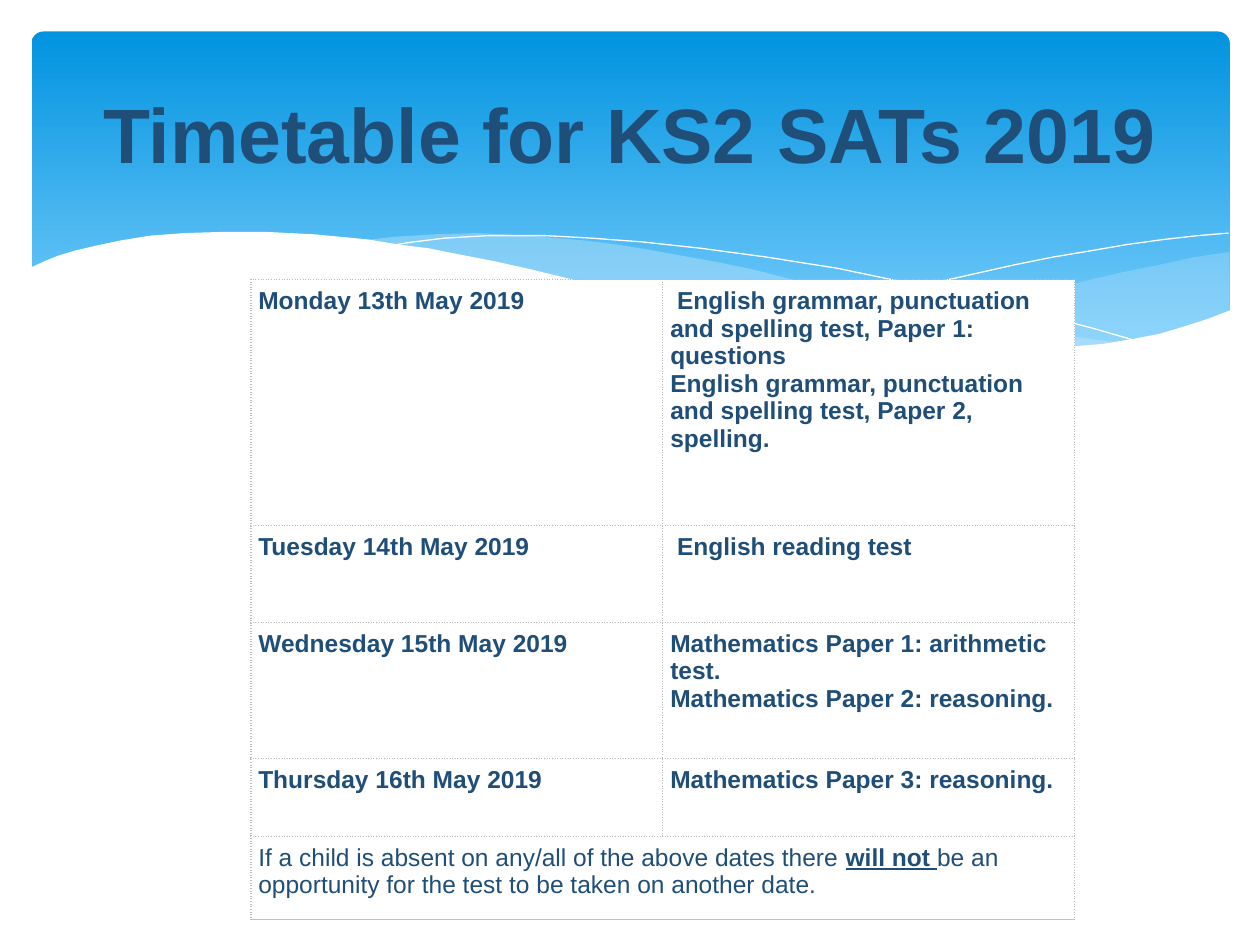
from lxml import etree
from pptx import Presentation
from pptx.dml.color import RGBColor
from pptx.enum.shapes import MSO_SHAPE
from pptx.enum.text import MSO_ANCHOR, PP_ALIGN
from pptx.oxml import parse_xml
from pptx.oxml.ns import nsdecls, qn
from pptx.util import Inches, Pt

ROUNDED = MSO_SHAPE.ROUNDED_RECTANGLE
MIDDLE = MSO_ANCHOR.MIDDLE
CENTER = PP_ALIGN.CENTER
WHITE = RGBColor(0xFF, 0xFF, 0xFF)
NAVY = RGBColor(0x1F, 0x4E, 0x79)
SKY = RGBColor(0x02, 0x93, 0xE0)
LIGHT_SKY = RGBColor(0x83, 0xD3, 0xFE)
PALE_BLUE = RGBColor(0xC6, 0xE7, 0xFC)
GRID_GREY = RGBColor(0xBB, 0xBB, 0xBB)
BASE_GREY = RGBColor(0xBF, 0xC1, 0xC3)


def add_wave(points, closed):
    corners = [(Inches(x), Inches(y)) for x, y in points]
    builder = slide.shapes.build_freeform(*corners[0])
    builder.add_line_segments(corners[1:], close=closed)
    wave = builder.convert_to_shape()
    wave.shadow.inherit = False
    return wave


def style_run(span, size, bold=True):
    span.font.name = "Arial"
    span.font.size = Pt(size)
    span.font.bold = bold
    span.font.color.rgb = NAVY


deck = Presentation()
deck.slide_width = Inches(10)
deck.slide_height = Inches(7.5)
slide = deck.slides.add_slide(deck.slide_layouts[6])

banner = slide.shapes.add_shape(ROUNDED, Inches(0.25), Inches(0.25), Inches(9.51), Inches(2.7))
banner.adjustments[0] = 0.035
banner.shadow.inherit = False
banner.line.fill.background()
banner.fill.gradient()
banner.fill.gradient_angle = 270
for stop, color, position in zip(banner.fill.gradient_stops, (SKY, LIGHT_SKY), (0, 1)):
    stop.color.rgb = color
    stop.position = position

right_wave = [
    (9.76, 2), (9.48, 2.04), (9.21, 2.1), (8.91, 2.16), (8.61, 2.23), (8.05, 2.37),
    (7.53, 2.48), (7.06, 2.57), (6.61, 2.65), (6.91, 2.69), (7.19, 2.72), (7.45, 2.75),
    (7.69, 2.77), (8.03, 2.78), (8.35, 2.77), (8.63, 2.75), (8.89, 2.72), (9.13, 2.67),
    (9.35, 2.62), (9.49, 2.57), (9.63, 2.52), (9.76, 2.47),
]
middle_wave = [
    (8.93, 2.73), (8.66, 2.69), (8.37, 2.65), (8.07, 2.6), (7.75, 2.54), (7.41, 2.47),
    (7.06, 2.4), (6.68, 2.31), (6.29, 2.22), (5.98, 2.14), (5.69, 2.08), (5.41, 2.03),
    (5.14, 1.98), (4.89, 1.94), (4.65, 1.91), (4.42, 1.89), (4.2, 1.87), (3.8, 1.85),
    (3.44, 1.86), (3.13, 1.88), (2.86, 1.91), (3.23, 1.96), (3.62, 2.03), (4.04, 2.11),
    (4.49, 2.22), (4.91, 2.32), (5.3, 2.4), (5.66, 2.48), (6.01, 2.55), (6.34, 2.61),
    (6.65, 2.66), (6.95, 2.7), (7.22, 2.74), (7.61, 2.77), (7.96, 2.78), (8.38, 2.78),
    (8.67, 2.76),
]
for points, opacity in ((right_wave, 29), (middle_wave, 40)):
    wave = add_wave(points, True)
    wave.line.fill.background()
    wave.fill.solid()
    wave.fill.fore_color.rgb = PALE_BLUE
    color_element = wave.fill._xPr.find(qn("a:solidFill"))[0]
    etree.SubElement(color_element, qn("a:alpha"), val=str(opacity * 1000))

falling_line = [
    (3.09, 1.95), (3.28, 1.92), (3.53, 1.89), (3.87, 1.87), (4.33, 1.87), (4.69, 1.89),
    (5.1, 1.92), (5.56, 1.97), (6.08, 2.04), (6.65, 2.13), (7.27, 2.26), (7.95, 2.41),
    (8.31, 2.51), (8.69, 2.61), (9.07, 2.72),
]
rising_line = [
    (6.13, 2.57), (6.53, 2.46), (6.95, 2.35), (7.48, 2.23), (8.06, 2.1), (8.36, 2.04),
    (8.66, 1.99), (8.95, 1.94), (9.24, 1.9), (9.51, 1.87), (9.75, 1.85),
]
for points in (falling_line, rising_line):
    curve = add_wave(points, False)
    curve.fill.background()
    curve.line.color.rgb = WHITE
    curve.line.width = Pt(0)

white_wave = [
    (9.77, 2.46), (9.59, 2.53), (9.4, 2.59), (9.2, 2.65), (8.99, 2.69), (8.75, 2.73),
    (8.5, 2.75), (8.09, 2.77), (7.78, 2.76), (7.44, 2.74), (7.08, 2.7), (6.68, 2.65),
    (6.26, 2.58), (5.79, 2.5), (5.29, 2.39), (4.75, 2.27), (4.47, 2.2), (4.18, 2.13),
    (3.91, 2.07), (3.65, 2.02), (3.4, 1.97), (3.16, 1.94), (2.92, 1.9), (2.71, 1.88),
    (2.5, 1.86), (2.11, 1.84), (1.77, 1.84), (1.46, 1.85), (1.19, 1.87), (0.95, 1.91),
    (0.76, 1.95), (0.59, 1.99), (0.46, 2.03), (0.36, 2.07), (0.23, 2.13), (0.23, 3.29),
    (9.77, 3.29),
]
foreground = add_wave(white_wave, True)
foreground.line.fill.background()
foreground.fill.solid()
foreground.fill.fore_color.rgb = WHITE

timetable = [
    ("Monday 13th May 2019",
     " English grammar, punctuation and spelling test, Paper 1: questions\n"
     "English grammar, punctuation and spelling test, Paper 2, spelling."),
    ("Tuesday 14th May 2019", " English reading test"),
    ("Wednesday 15th May 2019",
     "Mathematics Paper 1: arithmetic test.\nMathematics Paper 2: reasoning."),
    ("Thursday 16th May 2019", "Mathematics Paper 3: reasoning."),
    ("", ""),
]
row_heights = [1.95, 0.77, 1.08, 0.62, 0.66]
last_row = len(timetable) - 1
frame = slide.shapes.add_table(
    len(timetable), 2, Inches(1.99), Inches(2.22), Inches(6.54), Inches(5.08))
table = frame.table
table.first_row = False
table.horz_banding = False
for column in table.columns:
    column.width = Inches(3.27)
for row_index, (texts, height) in enumerate(zip(timetable, row_heights)):
    table.rows[row_index].height = Inches(height)
    for column_index, text in enumerate(texts):
        cell = table.cell(row_index, column_index)
        cell.margin_left = cell.margin_top = cell.margin_bottom = Inches(0.06)
        cell.margin_right = Inches(0.13)
        properties = cell._tc.get_or_add_tcPr()
        for side in "LRTB":
            is_base = row_index == last_row and side == "B"
            color, width, dash = (BASE_GREY, 0.75, "solid") if is_base else (GRID_GREY, 1, "dot")
            properties.append(parse_xml(
                f'<a:ln{side} {nsdecls("a")} w="{Pt(width)}"><a:solidFill>'
                f'<a:srgbClr val="{color}"/></a:solidFill>'
                f'<a:prstDash val="{dash}"/></a:ln{side}>'))
        cell.fill.solid()
        cell.fill.fore_color.rgb = WHITE
        if text:
            cell.text_frame.text = text
        for para in cell.text_frame.paragraphs:
            for span in para.runs:
                style_run(span, 14)

notice = table.cell(last_row, 0)
notice.merge(table.cell(last_row, 1))
notice_para = notice.text_frame.paragraphs[0]
for text, emphasis in (
    ("If a child is absent on any/all of the above dates there ", False),
    ("will not ", True),
    ("be an opportunity for the test to be taken on another date.", False),
):
    span = notice_para.add_run()
    span.text = text
    style_run(span, 14, emphasis)
    span.font.underline = emphasis

title = slide.shapes.add_textbox(Inches(0.5), Inches(0.37), Inches(9), Inches(1.37))
title.text_frame.word_wrap = True
title.text_frame.vertical_anchor = MIDDLE
title.text_frame.text = "Timetable for KS2 SATs 2019"
title_para = title.text_frame.paragraphs[0]
title_para.alignment = CENTER
style_run(title_para.runs[0], 44)

deck.save("out.pptx")
